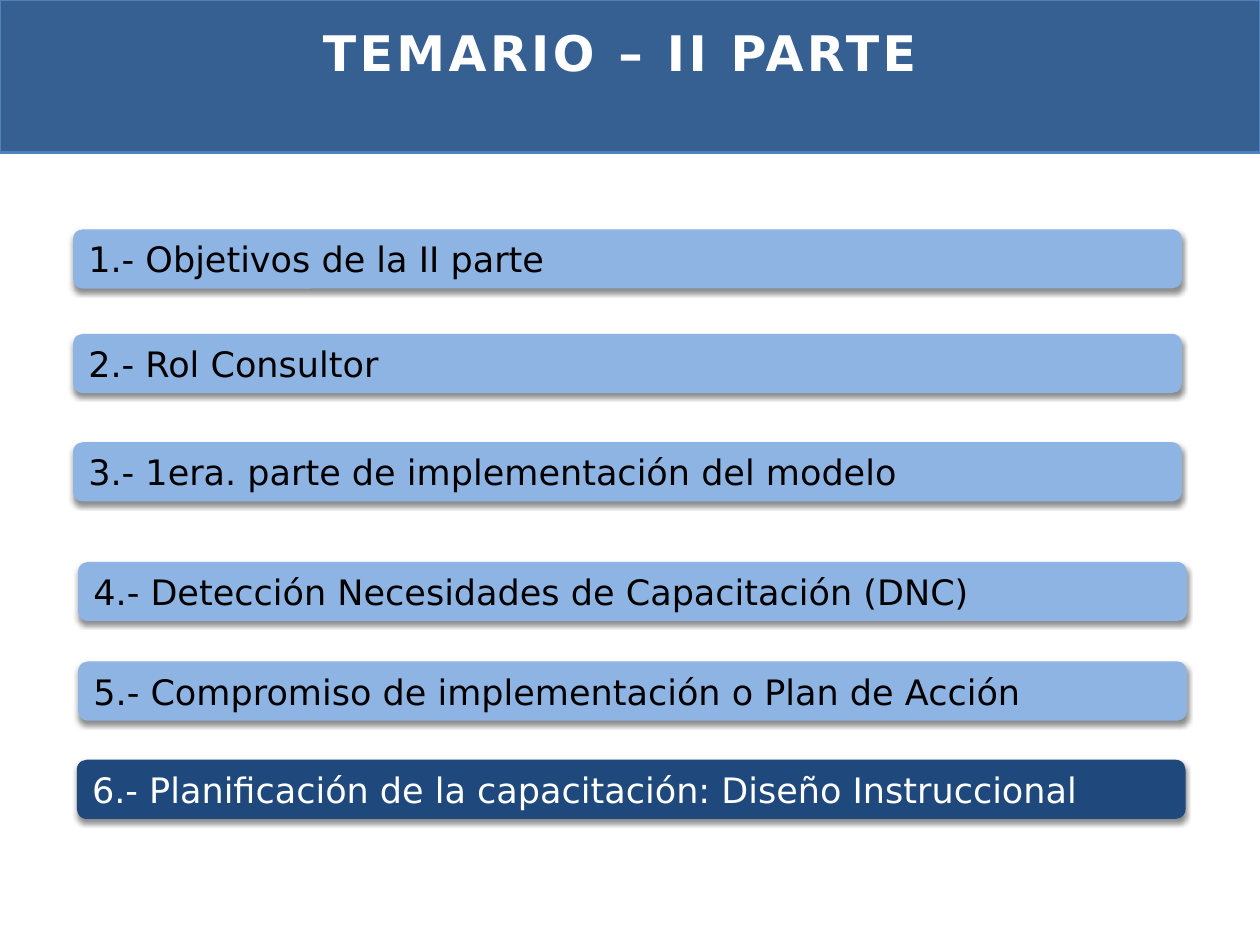
import dataclasses

import lxml.etree
import pptx
import pptx.dml.color
import pptx.enum.shapes
import pptx.enum.text
import pptx.oxml.ns
import pptx.util


@dataclasses.dataclass(frozen=True)
class Theme:
    font: str = "DejaVu Sans"
    band: str = "376092"
    band_line: str = "4F81BD"
    bar: str = "8EB4E3"
    current_bar: str = "1F497D"
    dark: str = "000000"
    light: str = "FFFFFF"
    title_size: int = 28
    item_size: int = 20


class Deck:
    COLS, ROWS = 100, 75

    def __init__(self, theme):
        self.theme = theme
        self.prs = pptx.Presentation()
        self.prs.slide_width = pptx.util.Inches(10)
        self.prs.slide_height = pptx.util.Inches(7.5)
        self.s = self.prs.slides.add_slide(self.prs.slide_layouts[5])

    def box(self, col, row, cols, rows):
        w = self.prs.slide_width / self.COLS
        h = self.prs.slide_height / self.ROWS
        return [round(v) for v in (col * w, row * h, cols * w, rows * h)]

    def color(self, value):
        return pptx.dml.color.RGBColor.from_string(value)

    def shape(self, kind, place, fill):
        sp = self.s.shapes.add_shape(kind, *self.box(*place))
        sp.shadow.inherit = False
        sp.fill.solid()
        sp.fill.fore_color.rgb = self.color(fill)
        sp.line.fill.background()
        return sp

    def set_text(self, sp, text, size, color, align, anchor, bold=False):
        tf = sp.text_frame
        tf.text = text
        tf.word_wrap = True
        tf.vertical_anchor = anchor
        p = tf.paragraphs[0]
        p.alignment = align
        r = p.runs[0]
        r.font.name = self.theme.font
        r.font.size = pptx.util.Pt(size)
        r.font.bold = bold
        r.font.color.rgb = self.color(color)
        return r

    def band(self, *place):
        sp = self.shape(pptx.enum.shapes.MSO_SHAPE.RECTANGLE, place, self.theme.band)
        sp.line.color.rgb = self.color(self.theme.band_line)
        sp.line.width = pptx.util.Pt(1.5)
        self.s.shapes.title._element.addprevious(sp._element)

    def title(self, text, *place):
        sp = self.s.shapes.title
        sp.left, sp.top, sp.width, sp.height = self.box(*place)
        r = self.set_text(sp, text, self.theme.title_size, self.theme.light,
                          pptx.enum.text.PP_ALIGN.CENTER,
                          pptx.enum.text.MSO_ANCHOR.TOP, bold=True)
        r.font._element.set("spc", "200")

    def bar(self, text, *place, current=False):
        t = self.theme
        fill, color = (t.current_bar, t.light) if current else (t.bar, t.dark)
        sp = self.shape(pptx.enum.shapes.MSO_SHAPE.ROUNDED_RECTANGLE, place, fill)
        self.drop_shadow(sp)
        self.set_text(sp, text, t.item_size, color, pptx.enum.text.PP_ALIGN.LEFT,
                      pptx.enum.text.MSO_ANCHOR.MIDDLE)

    def drop_shadow(self, sp):
        qn = pptx.oxml.ns.qn
        effects = sp._element.spPr.find(qn("a:effectLst"))
        shadow = lxml.etree.SubElement(
            effects, qn("a:outerShdw"), blurRad=str(pptx.util.Pt(3)),
            dist=str(pptx.util.Pt(2)), dir="5400000", rotWithShape="0")
        color = lxml.etree.SubElement(shadow, qn("a:srgbClr"), val=self.theme.dark)
        lxml.etree.SubElement(color, qn("a:alpha"), val="45000")


def main():
    topics = [
        ("Objetivos de la II parte", 5.8, 18.2),
        ("Rol Consultor", 5.8, 26.5),
        ("1era. parte de implementación del modelo", 5.8, 35.1),
        ("Detección Necesidades de Capacitación (DNC)", 6.2, 44.6),
        ("Compromiso de implementación o Plan de Acción", 6.2, 52.5),
        ("Planificación de la capacitación: Diseño Instruccional", 6.1, 60.3),
    ]
    deck = Deck(Theme())
    deck.band(0, 0, deck.COLS, 12.1)
    deck.title("TEMARIO – II PARTE", 5.1, 1.3, 88.2, 12.5)
    for number, (topic, col, row) in enumerate(topics, 1):
        deck.bar(f"{number}.- {topic}", col, row, 88, 4.7,
                 current=number == len(topics))
    deck.prs.save("out.pptx")


if __name__ == "__main__":
    main()
